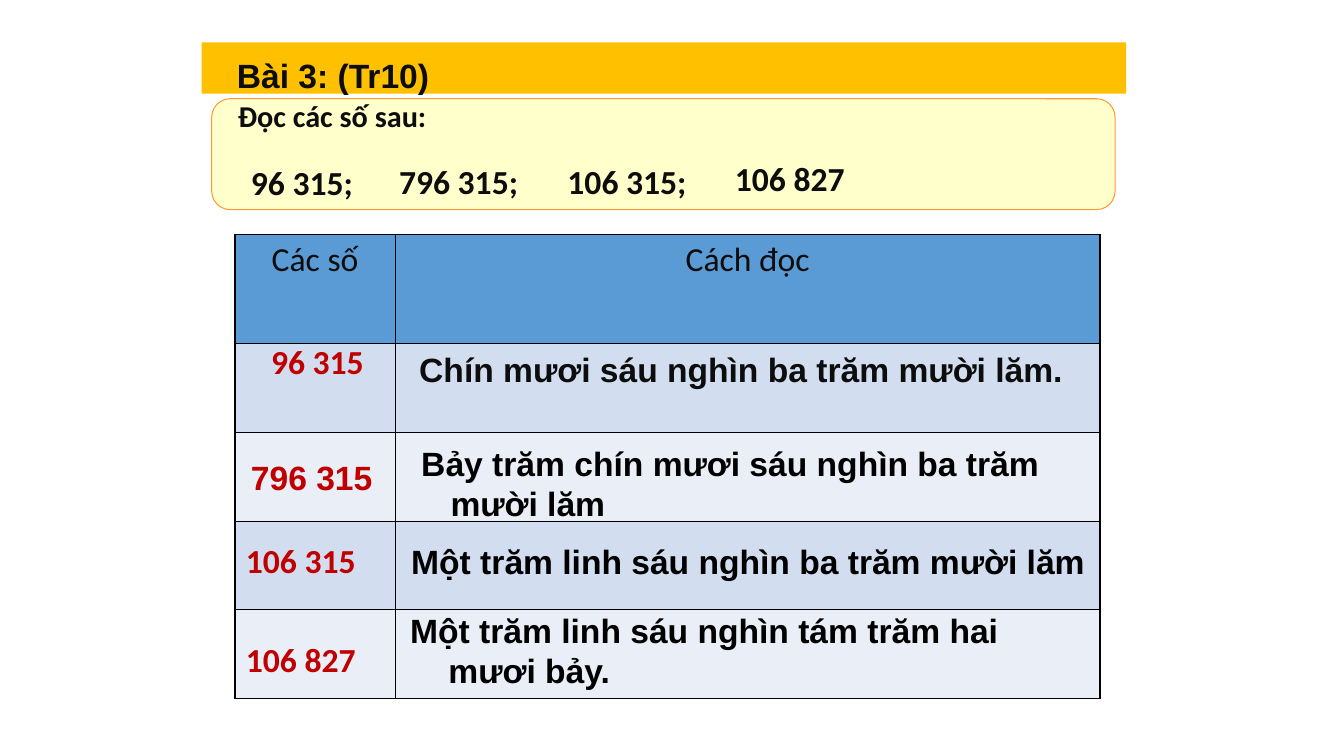
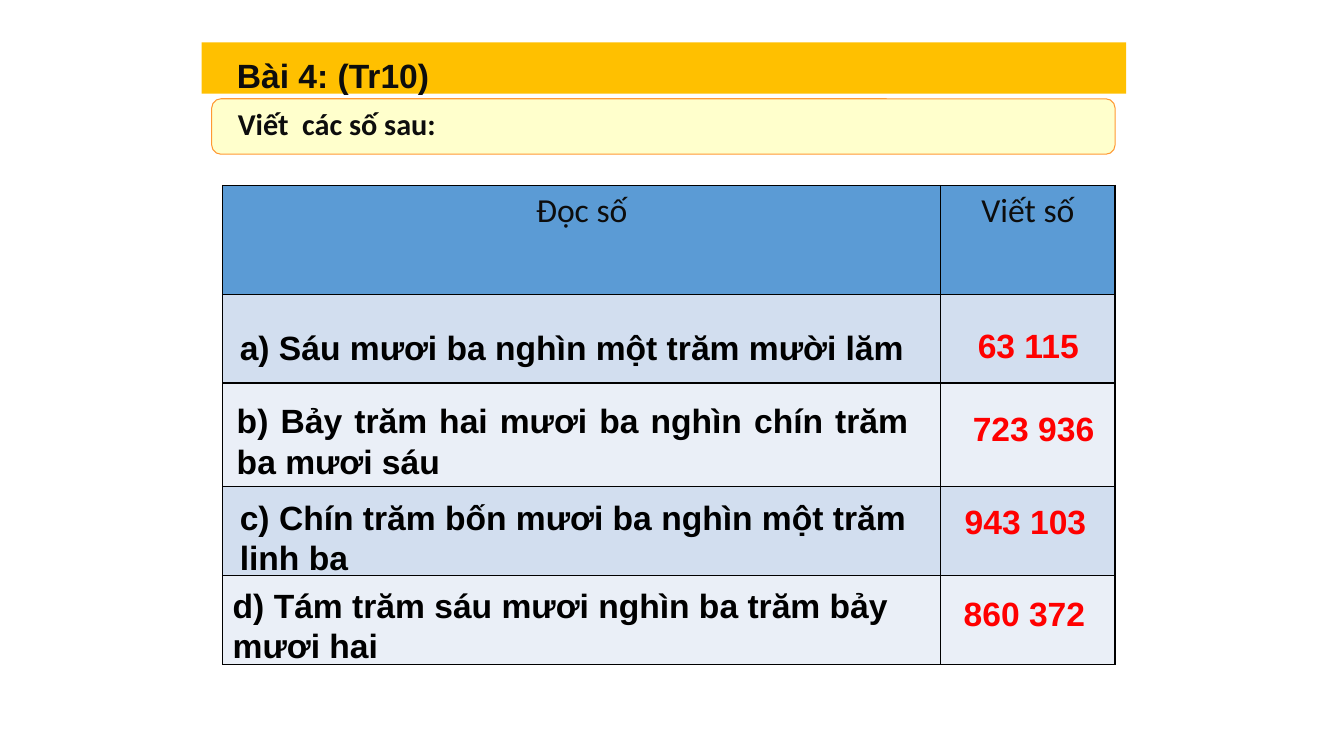
from lxml.etree import SubElement
from pptx import Presentation
from pptx.dml.color import RGBColor
from pptx.enum.shapes import MSO_SHAPE
from pptx.enum.text import MSO_ANCHOR, PP_ALIGN
from pptx.oxml.ns import qn
from pptx.util import Inches, Pt

HEX = {
    "ink": "0D0D0D", "black": "000000", "dark": "C00000", "red": "FF0000",
    "gold": "FFC000", "cream": "FFFFCC", "edge": "FF9933",
    "head": "5B9BD5", "odd": "D2DEEF", "even": "EAEFF7",
}
COLOR = {name: RGBColor.from_string(code) for name, code in HEX.items()}
LEFT, MID, JUST = PP_ALIGN.LEFT, PP_ALIGN.CENTER, PP_ALIGN.JUSTIFY
HANG = 0.38


def style(para, font, color, size=24, bold=True, align=LEFT):
    para.alignment = align
    for run in para.runs:
        run.font.name = font
        run.font.size = Pt(size)
        run.font.bold = bold
        run.font.color.rgb = COLOR[color]


def write(slide, text, x, y, w, h, font="Arial", color="black", size=24,
          align=LEFT, space=None, hang=0, anchor=MSO_ANCHOR.TOP):
    box = slide.shapes.add_textbox(Inches(x), Inches(y), Inches(w), Inches(h))
    frame = box.text_frame
    frame.word_wrap = True
    frame.vertical_anchor = anchor
    frame.text = text
    para = frame.paragraphs[0]
    style(para, font, color, size, align=align)
    if space:
        para.line_spacing = space
    if hang:
        props = para._p.get_or_add_pPr()
        props.set("marL", str(Inches(HANG)))
        props.set("indent", str(-Inches(hang)))


# What differs between the two exercises
tasks = [
    {
        "title": "Bài 3: (Tr10)", "ask": "Đọc các số sau:", "top": 1, "panel": 1.1,
        "grid": (2.33, 2.33), "cols": [1.59, 6.99],
        "rows": [1.08, 0.88, 0.88, 0.88, 0.88], "heads": ["Các số", "Cách đọc"],
    },
    {
        "title": "Bài 4: (Tr10)", "ask": "Viết  các số sau:", "top": 1.08, "panel": 0.55,
        "grid": (2.21, 1.84), "cols": [7.12, 1.73],
        "rows": [1.08, 0.88, 1.03, 0.88, 0.88], "heads": ["Đọc số", "Viết số"],
    },
]

deck = Presentation()
deck.slide_width, deck.slide_height = Inches(13.33), Inches(7.5)
slides = []

for task in tasks:
    slide = deck.slides.add_slide(deck.slide_layouts[6])
    slides.append(slide)

    # Table with banded rows and black borders
    x, y = task["grid"]
    cols, rows = task["cols"], task["rows"]
    table = slide.shapes.add_table(len(rows), len(cols), Inches(x), Inches(y),
                                   Inches(sum(cols)), Inches(sum(rows))).table
    for col, width in zip(table.columns, cols):
        col.width = Inches(width)
    for r, height in enumerate(rows):
        table.rows[r].height = Inches(height)
        band = "head" if r == 0 else "odd" if r % 2 else "even"
        for cell in table.rows[r].cells:
            props = cell._tc.get_or_add_tcPr()
            for side in ("a:lnL", "a:lnR", "a:lnT", "a:lnB"):
                line = SubElement(props, qn(side), w=str(Pt(1)))
                fill = SubElement(line, qn("a:solidFill"))
                SubElement(fill, qn("a:srgbClr"), val=HEX["black"])
            cell.fill.solid()
            cell.fill.fore_color.rgb = COLOR[band]
    for cell, head in zip(table.rows[0].cells, task["heads"]):
        cell.text_frame.text = head
        style(cell.text_frame.paragraphs[0], "Calibri", "ink", bold=False, align=MID)

    # Question panel and title band
    for kind, x, y, w, h, tint, edge in [
        (MSO_SHAPE.ROUNDED_RECTANGLE, 2.1, 0.98, 8.96, task["panel"], "cream", "edge"),
        (MSO_SHAPE.RECTANGLE, 2, 0.42, 9.17, 0.51, "gold", None),
    ]:
        shape = slide.shapes.add_shape(kind, Inches(x), Inches(y), Inches(w), Inches(h))
        shape.shadow.inherit = False
        shape.fill.solid()
        shape.fill.fore_color.rgb = COLOR[tint]
        if edge:
            shape.line.color.rgb = COLOR[edge]
            shape.line.width = Pt(0.75)
        else:
            shape.line.fill.background()

    write(slide, task["title"], 2.25, 0.5, 4.25, 0.5, color="ink", align=JUST)
    write(slide, task["ask"], 2.26, task["top"], 2.91, 0.34, "Calibri", "ink", 21.6,
          JUST, 0.9, anchor=MSO_ANCHOR.MIDDLE)

read, spell = slides

# Numbers to read, then the same numbers in the table
for text, x, y, font, color, space in [
    ("96 315;", 2.39, 1.56, "Calibri", "ink", None),
    ("796 315;", 3.86, 1.55, "Calibri", "ink", None),
    ("106 315;", 5.53, 1.59, "Calibri", "ink", 0.9),
    ("106 827", 7.19, 1.56, "Calibri", "ink", 0.9),
    ("96 315", 2.59, 3.33, "Calibri", "dark", None),
    ("796 315", 2.39, 4.48, "Arial", "dark", None),
    ("106 315", 2.34, 5.35, "Calibri", "dark", 0.9),
    ("106 827", 2.34, 6.33, "Calibri", "dark", 0.9),
]:
    write(read, text, x, y, 1.58, 0.5, font, color, align=JUST, space=space, hang=HANG)

# How each number is read
write(read, "Chín mươi sáu nghìn ba trăm mười lăm.", 4.06, 3.41, 7.17, 0.51,
      color="ink", align=JUST)
for text, x, y, w, h, hang in [
    ("Bảy trăm chín mươi sáu nghìn ba trăm mười lăm", 3.99, 4.34, 6.84, 0.83, 0.29),
    ("Một trăm linh sáu nghìn ba trăm mười lăm", 3.98, 5.32, 7.19, 0.53, HANG),
    ("Một trăm linh sáu nghìn tám trăm hai mươi bảy.", 3.97, 6, 6.86, 0.92, HANG),
]:
    write(read, text, x, y, w, h, hang=hang)

# Numbers in words
for text, x, y, w, h, align in [
    ("a) Sáu mươi ba nghìn một trăm mười lăm", 2.28, 3.19, 6.83, 0.51, JUST),
    ("b) Bảy trăm hai mươi ba nghìn chín trăm ba mươi sáu", 2.25, 3.92, 6.86, 0.91, JUST),
    ("c) Chín trăm bốn mươi ba nghìn một trăm linh ba", 2.28, 4.88, 7.19, 0.87, LEFT),
    ("d) Tám trăm sáu mươi nghìn ba trăm bảy mươi hai", 2.21, 5.75, 7.19, 0.87, LEFT),
]:
    write(spell, text, x, y, w, h, align=align)

# Numbers in digits
for text, x, y in [
    ("63 115", 9.6, 3.17),
    ("723 936", 9.55, 4),
    ("943 103", 9.47, 4.92),
    ("860 372", 9.46, 5.83),
]:
    write(spell, text, x, y, 1.5, 0.54, color="red")

deck.save("out.pptx")
